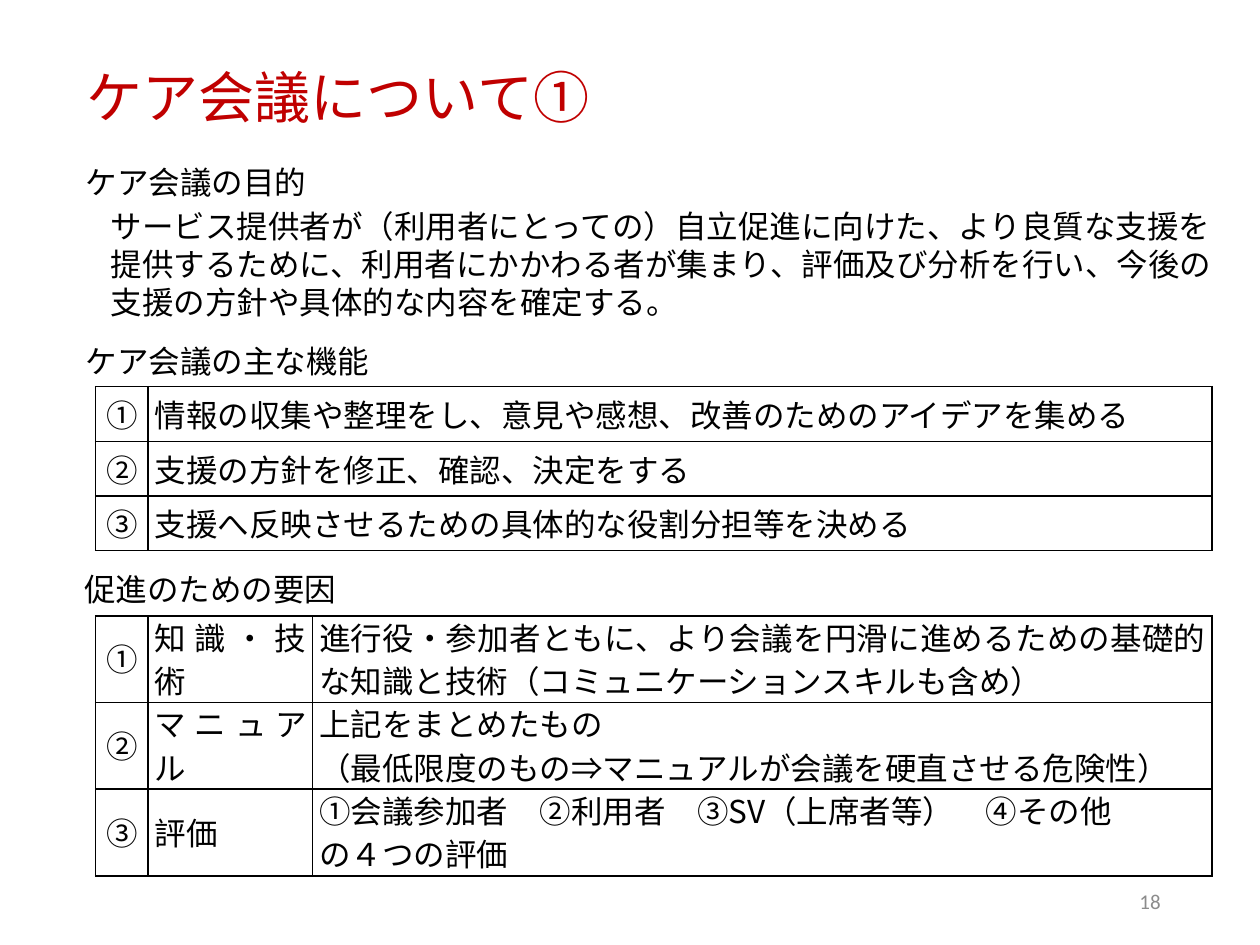
from typing import NamedTuple, Optional

from lxml import etree
from pptx import Presentation
from pptx.enum import text as tx
from pptx.oxml import ns
from pptx.util import Pt

HUES = {"ink": "000000", "title": "C00000", "page": "8C8C8C"}
SANS = "Noto Sans CJK JP"
LEFT, MID, RIGHT = tx.PP_ALIGN.LEFT, tx.PP_ALIGN.CENTER, tx.PP_ALIGN.RIGHT
FULL = tx.PP_ALIGN.JUSTIFY


class Style(NamedTuple):
    size: float = 18
    hue: str = "ink"
    font: str = SANS
    align: int = LEFT
    pitch: Optional[float] = None


class Label(NamedTuple):
    words: str
    left: float
    top: float
    width: float
    height: float
    style: Style
    grow: bool = True


class Grid(NamedTuple):
    top: float
    cols: list
    row: float
    rows: list
    pitch: float


BODY = Style(pitch=Pt(21.8))
LABELS = [
    Label("ケア会議の主な機能", 41.8, 191.5, 216.7, 29, BODY),
    Label("促進のための要因", 41, 321.8, 216.7, 29, BODY),
    Label("ケア会議の目的", 41.8, 89.3, 216.7, 29, BODY),
    Label("サービス提供者が（利用者にとっての）自立促進に向けた、より良質な支援を"
          "提供するために、利用者にかかわる者が集まり、評価及び分析を行い、今後の"
          "支援の方針や具体的な内容を確定する。", 56.2, 114.5, 652.3, 72.7, BODY),
    Label("18", 508.3, 500.4, 162, 28.8,
          Style(12, "page", "Calibri", RIGHT), False),
    Label("ケア会議について①", 42.5, 38.9, 540, 39.6,
          Style(32, "title", pitch=0.8), False),
]

GRIDS = [
    Grid(221, [30, 608], 31.2, [
        ["①", "情報の収集や整理をし、意見や感想、改善のためのアイデアを集める"],
        ["②", "支援の方針を修正、確認、決定をする"],
        ["③", "支援へ反映させるための具体的な役割分担等を決める"],
    ], 26),
    Grid(352, [30, 94, 514], 49.5, [
        ["①", "知識・技術", "進行役・参加者ともに、より会議を円滑に進めるための基礎的"
         "な知識と技術（コミュニケーションスキルも含め）"],
        ["②", "マニュアル", "上記をまとめたもの\n"
         "（最低限度のもの⇒マニュアルが会議を硬直させる危険性）"],
        ["③", "評価", "①会議参加者　②利用者　③SV（上席者等）　④その他\n"
         "の４つの評価"],
    ], 24.7),
]


def write(frame, words: str, style: Style) -> None:
    for i, line in enumerate(words.split("\n")):
        para = frame.add_paragraph() if i else frame.paragraphs[0]
        para.alignment = style.align
        if style.pitch:
            para.line_spacing = style.pitch
        run = para.add_run()
        run.text = line
        font = run.font
        font.size, font.name = Pt(style.size), style.font
        font.color.rgb = font.color.rgb.from_string(HUES[style.hue]) \
            if font.color.type else tint(style.hue)
        east = etree.SubElement(font._element, ns.qn("a:ea"))
        east.set("typeface", style.font)


def tint(hue: str):
    from pptx.dml.color import RGBColor
    return RGBColor.from_string(HUES[hue])


def place(slide, label: Label) -> None:
    box = slide.shapes.add_textbox(Pt(label.left), Pt(label.top),
                                   Pt(label.width), Pt(label.height))
    frame = box.text_frame
    frame.word_wrap = True
    if label.grow:
        frame.auto_size = tx.MSO_AUTO_SIZE.SHAPE_TO_FIT_TEXT
    else:
        frame.vertical_anchor = tx.MSO_ANCHOR.MIDDLE
    write(frame, label.words, label.style)


def frame_in(cell) -> None:
    props = cell._tc.get_or_add_tcPr()
    for i, side in enumerate(("lnL", "lnR", "lnT", "lnB")):
        line = etree.Element(ns.qn(f"a:{side}"), w=str(Pt(1)))
        fill = etree.SubElement(line, ns.qn("a:solidFill"))
        etree.SubElement(fill, ns.qn("a:srgbClr"), val=HUES["ink"])
        props.insert(i, line)


def draw(slide, grid: Grid) -> None:
    count = len(grid.rows)
    table = slide.shapes.add_table(
        count, len(grid.cols), Pt(54.7), Pt(grid.top),
        Pt(sum(grid.cols)), Pt(grid.row * count)).table
    table.first_row = table.horz_banding = False
    for col, width in zip(table.columns, grid.cols):
        col.width = Pt(width)
    for r, row in enumerate(grid.rows):
        table.rows[r].height = Pt(grid.row)
        for c, words in enumerate(row):
            cell = table.cell(r, c)
            cell.fill.background()
            cell.vertical_anchor = tx.MSO_ANCHOR.MIDDLE
            cell.margin_left = cell.margin_right = Pt(3.6)
            cell.margin_top = cell.margin_bottom = 0
            frame_in(cell)
            style = Style(align=FULL if c else MID, pitch=Pt(grid.pitch))
            write(cell.text_frame, words, style)


def main() -> None:
    deck = Presentation()
    deck.slide_width, deck.slide_height = Pt(720), Pt(540)
    slide = deck.slides.add_slide(deck.slide_layouts[6])
    for grid in GRIDS:
        draw(slide, grid)
    for label in LABELS:
        place(slide, label)
    deck.save("out.pptx")


if __name__ == "__main__":
    main()
